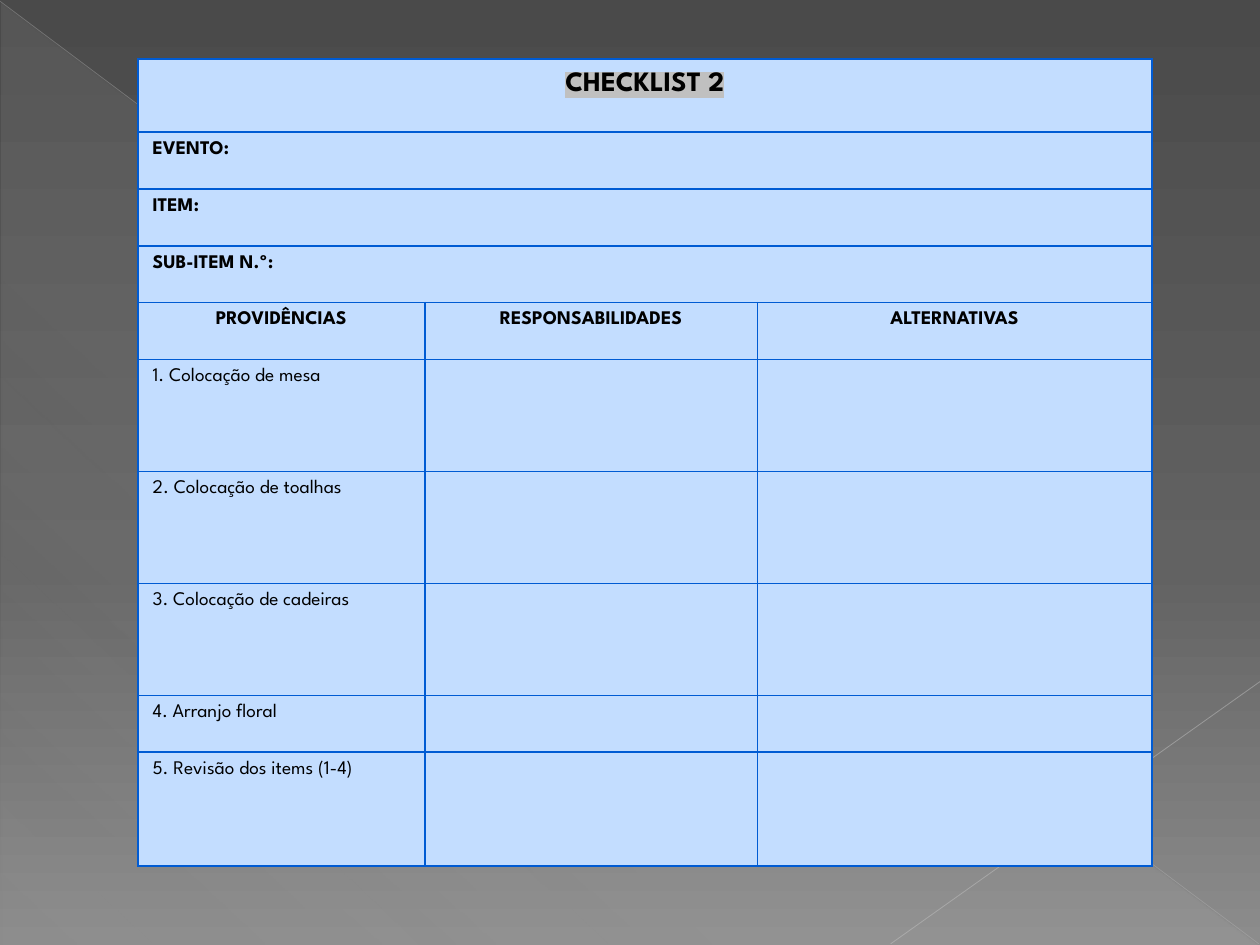
from lxml import etree
from pptx import Presentation
from pptx.dml.color import RGBColor
from pptx.enum.shapes import MSO_CONNECTOR, MSO_SHAPE
from pptx.enum.text import PP_ALIGN
from pptx.oxml.ns import qn
from pptx.util import Pt

CENTER, LEFT = PP_ALIGN.CENTER, PP_ALIGN.LEFT
STRAIGHT = MSO_CONNECTOR.STRAIGHT
TRIANGLE = MSO_SHAPE.RIGHT_TRIANGLE


def rgb(value):
    return RGBColor.from_string(value)


def add(parent, tag, **attrs):
    return etree.SubElement(parent, qn(tag), {k: str(v) for k, v in attrs.items()})


def add_color(parent, value, alpha=100):
    clr = add(parent, "a:srgbClr", val=value)
    if alpha < 100:
        add(clr, "a:alpha", val=alpha * 1000)


class Sheet:
    ink, paper, rule, mark = "000000", "C3DDFF", "005BD3", "C0C0C0"
    font = "League Spartan"

    def __init__(self, slide):
        self.s = slide

    def gradient(self, target, stops, angle):
        target.fill.gradient()
        grad = target.element.xpath(".//a:gradFill")[0]
        for child in list(grad):
            grad.remove(child)
        gs_list = add(grad, "a:gsLst")
        for pos, value, alpha in stops:
            add_color(add(gs_list, "a:gs", pos=pos * 1000), value, alpha)
        add(grad, "a:lin", ang=angle * 60000, scaled=0)

    def background(self, stops, angle):
        bg = self.s.background
        bg.fill.gradient()
        self.gradient(bg, stops, angle)

    def triangle(self, x, y, w, h, stops, angle):
        sp = self.s.shapes.add_shape(TRIANGLE, Pt(x), Pt(y), Pt(w), Pt(h))
        sp.shadow.inherit = False
        sp.line.fill.background()
        self.gradient(sp, stops, angle)

    def line(self, x1, y1, x2, y2, color, width, alpha):
        cx = self.s.shapes.add_connector(STRAIGHT, Pt(x1), Pt(y1), Pt(x2), Pt(y2))
        cx.line.width = Pt(width)
        cx.line.color.rgb = rgb(color)
        clr = cx.element.xpath("./p:spPr/a:ln/a:solidFill/a:srgbClr")[0]
        add(clr, "a:alpha", val=alpha * 1000)
        add(cx.element.spPr, "a:effectLst")

    def table(self, x, y, cols, rows):
        frame = self.s.shapes.add_table(
            len(rows), len(cols), Pt(x), Pt(y), Pt(sum(cols)), Pt(sum(rows)))
        tbl = frame.table
        tbl.first_row = tbl.horz_banding = False
        for col, width in zip(tbl.columns, cols):
            col.width = Pt(width)
        for row, height in zip(tbl.rows, rows):
            row.height = Pt(height)
        for cell in tbl.iter_cells():
            self.cell_style(cell)
        return tbl

    def cell_style(self, cell):
        cell.fill.solid()
        cell.fill.fore_color.rgb = rgb(self.paper)
        margins = {"margin_left": 5, "margin_right": 5, "margin_top": 0, "margin_bottom": 0}
        for name, value in margins.items():
            setattr(cell, name, Pt(value))
        tc_pr = cell._tc.tcPr
        for i, side in enumerate(("a:lnL", "a:lnR", "a:lnT", "a:lnB")):
            ln = add(tc_pr, side, w=Pt(1))
            add_color(add(ln, "a:solidFill"), self.rule)
            tc_pr.insert(i, ln)

    def text(self, cell, text, size=11, bold=True, align=LEFT, marked=False):
        if align == LEFT:
            cell.margin_left = Pt(8.4)
        p = cell.text_frame.paragraphs[0]
        for name, value in {"alignment": align, "line_spacing": 1.5, "space_after": Pt(10)}.items():
            setattr(p, name, value)
        r = p.add_run()
        r.text = text
        for name, value in {"name": self.font, "size": Pt(size), "bold": bold}.items():
            setattr(r.font, name, value)
        r.font.color.rgb = rgb(self.ink)
        if marked:
            r_pr = r.font._element
            highlight = add(r_pr, "a:highlight")
            add_color(highlight, self.mark)
            r_pr.find(qn("a:solidFill")).addnext(highlight)


def main():
    prs = Presentation()
    prs.slide_width, prs.slide_height = Pt(720), Pt(540)
    sheet = Sheet(prs.slides.add_slide(prs.slide_layouts[6]))

    sheet.background([(0, "4A4A4A", 100), (60, "626262", 100), (100, "8C8C8C", 100)], 90)
    sheet.triangle(0.7, 1.4, 718.6, 538.6,
                   [(0, "D2D2D2", 10), (70, "D2D2D2", 8), (100, "D2D2D2", 1)], 133)
    sheet.line(0, 0.7, 719.3, 539.3, "BFBFBF", 0.39, 35)
    sheet.line(720, 389.5, 509, 539.3, "C6C6C6", 0.47, 45)

    fields = ["EVENTO:", "ITEM:", "SUB-ITEM N.º:"]
    headings = ["PROVIDÊNCIAS", "RESPONSABILIDADES", "ALTERNATIVAS"]
    tasks = ["1. Colocação de mesa", "2. Colocação de toalhas", "3. Colocação de cadeiras",
             "4. Arranjo floral", "5. Revisão dos items (1-4)"]
    low, high = 32.5, 64
    rows = [41.8] + [low] * 4 + [high] * 3 + [low, 65]
    tbl = sheet.table(78.8, 33.7, [164, 190, 225.4], rows)

    heading_row = len(fields) + 1
    for i in range(heading_row):
        tbl.cell(i, 0).merge(tbl.cell(i, 2))
    sheet.text(tbl.cell(0, 0), "CHECKLIST 2", size=16, align=CENTER, marked=True)
    for i, field in enumerate(fields, 1):
        sheet.text(tbl.cell(i, 0), field)
    for j, heading in enumerate(headings):
        sheet.text(tbl.cell(heading_row, j), heading, align=CENTER)
    for i, task in enumerate(tasks, heading_row + 1):
        sheet.text(tbl.cell(i, 0), task, bold=False)

    prs.save("out.pptx")


if __name__ == "__main__":
    main()
